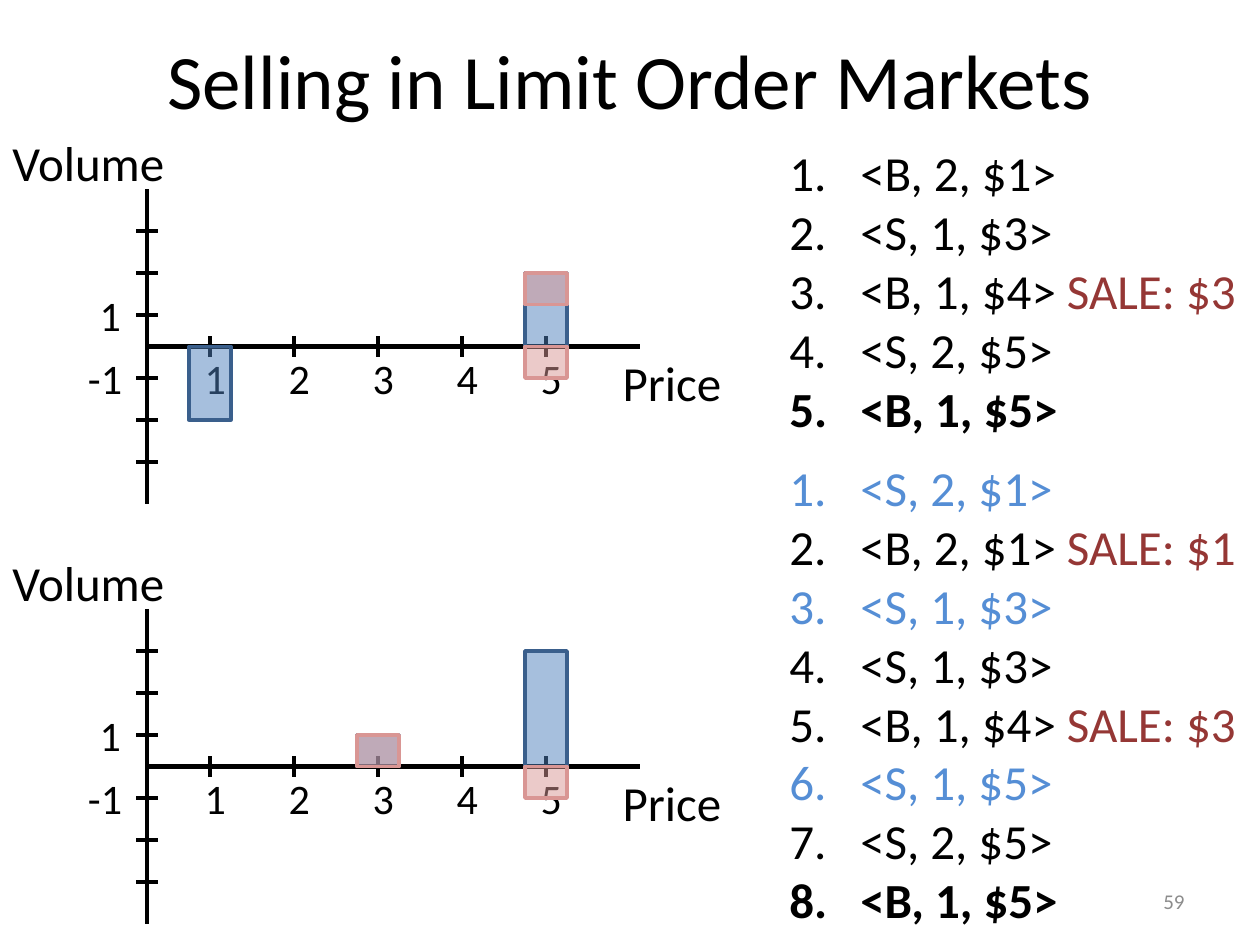
from lxml import etree
from pptx import Presentation
from pptx import util as u
from pptx.dml.color import RGBColor
from pptx.enum import shapes, text
from pptx.oxml.ns import qn

PX = 7620
FONT = "Calibri"
C = {"black": "000000", "grey": "8C8C8C", "sale": "953735", "own": "558ED5",
     "blue": "4F81BD", "blue_line": "3A5F8C", "pink": "D99694"}
ALIGN = {"l": text.PP_ALIGN.LEFT, "c": text.PP_ALIGN.CENTER, "r": text.PP_ALIGN.RIGHT}


def px(*values):
    return [u.Emu(v * PX) for v in values]


def rgb(name):
    return RGBColor.from_string(C[name])


def add_text(p, content, size=28, color="black", bold=False, align="l"):
    p.alignment = ALIGN[align]
    r = p.add_run()
    r.text = content
    r.font.name = FONT
    r.font.size = u.Pt(size)
    r.font.bold = bold
    r.font.color.rgb = rgb(color)


def add_box(s, box, anchor=text.MSO_ANCHOR.TOP):
    tf = s.shapes.add_textbox(*px(*box)).text_frame
    tf.word_wrap = True
    tf.vertical_anchor = anchor
    return tf


def add_label(s, box, content, anchor=text.MSO_ANCHOR.TOP, **fmt):
    add_text(add_box(s, box, anchor).paragraphs[0], content, **fmt)


def add_line(s, x1, y1, x2, y2):
    ln = s.shapes.add_connector(shapes.MSO_CONNECTOR.STRAIGHT, *px(x1, y1, x2, y2))
    ln.line.color.rgb = rgb("black")
    ln.line.width = u.Pt(2.5)
    etree.SubElement(ln._element.spPr, qn("a:effectLst"))


def add_bar(s, box, fill, line):
    sp = s.shapes.add_shape(shapes.MSO_SHAPE.RECTANGLE, *px(*box))
    sp.shadow.inherit = False
    sp.fill.solid()
    sp.fill.fore_color.rgb = rgb(fill)
    color = sp._element.spPr.find(qn("a:solidFill"))[0]
    etree.SubElement(color, qn("a:alpha"), val="50000")
    sp.line.color.rgb = rgb(line)
    sp.line.width = u.Pt(2)


def add_title(s, box, content):
    sp = s.shapes.title
    sp.left, sp.top, sp.width, sp.height = px(*box)
    tf = sp.text_frame
    tf.word_wrap = True
    tf.vertical_anchor = text.MSO_ANCHOR.MIDDLE
    add_text(tf.paragraphs[0], content, size=44, align="c")


def add_volume_plot(s, left, top, bars):
    axis_x, axis_y = left + 140, top + 210
    add_line(s, axis_x, top + 60, axis_x, top + 360)
    add_line(s, axis_x, axis_y, left + 610, axis_y)
    add_label(s, (left, top, 190, 68), "Volume")
    add_label(s, (left + 580, axis_y, 120, 68), "Price", align="c")
    for step in range(3):
        for y in (axis_y - 30 - 40 * step, axis_y + 30 + 40 * step):
            add_line(s, axis_x - 10, y, axis_x + 10, y)
    add_label(s, (left + 80, axis_y - 60, 50, 60), "1", size=24, align="c")
    add_label(s, (left + 70, axis_y, 60, 60), "-1", size=24, align="c")
    for price in range(1, 6):
        x = axis_x - 20 + 80 * price
        add_line(s, x, axis_y + 10, x, axis_y - 10)
        add_label(s, (x - 20, axis_y, 50, 60), str(price), size=24, align="c")
    for price, offset, height, fill, line in bars:
        x = axis_x - 40 + 80 * price
        add_bar(s, (x, axis_y + offset, 40, height), fill, line)


def add_orders(s, box, orders):
    tf = add_box(s, box)
    for i, (order, sale, color, bold) in enumerate(orders):
        p = tf.paragraphs[0] if i == 0 else tf.add_paragraph()
        add_text(p, order + (" " if sale else ""), color=color, bold=bold)
        if sale:
            add_text(p, sale, color="sale")
        pPr = p._p.get_or_add_pPr()
        pPr.set("marL", "514350")
        pPr.set("indent", "-514350")
        etree.SubElement(pPr, qn("a:buFont"), typeface="+mj-lt")
        etree.SubElement(pPr, qn("a:buAutoNum"), type="arabicPeriod")


BLUE = ("blue", "blue_line")
PINK = ("pink", "pink")
PLOTS = [
    (120, [(1, 0, 70, *BLUE), (5, -70, 70, *BLUE),
           (5, 0, 30, *PINK), (5, -70, 30, *PINK)]),
    (520, [(3, -30, 30, *BLUE), (5, -110, 110, *BLUE),
           (5, 0, 30, *PINK), (3, -30, 30, *PINK)]),
]
MARKET_ORDERS = [
    ("<B, 2, $1>", "", "black", False),
    ("<S, 1, $3>", "", "black", False),
    ("<B, 1, $4>", "SALE: $3", "black", False),
    ("<S, 2, $5>", "", "black", False),
    ("<B, 1, $5>", "", "black", True),
]
SELLER_ORDERS = [
    ("<S, 2, $1>", "", "own", False),
    ("<B, 2, $1>", "SALE: $1", "black", False),
    ("<S, 1, $3>", "", "own", False),
    ("<S, 1, $3>", "", "black", False),
    ("<B, 1, $4>", "SALE: $3", "black", False),
    ("<S, 1, $5>", "", "own", False),
    ("<S, 2, $5>", "", "black", False),
    ("<B, 1, $5>", "", "black", True),
]


def main():
    prs = Presentation()
    prs.slide_width, prs.slide_height = px(1200, 900)
    s = prs.slides.add_slide(prs.slide_layouts[5])
    add_title(s, (60, 20, 1080, 110), "Selling in Limit Order Markets")
    add_label(s, (860, 834, 280, 48), "59", text.MSO_ANCHOR.MIDDLE,
              size=12, color="grey", align="r")
    add_orders(s, (740, 130, 460, 295), MARKET_ORDERS)
    add_orders(s, (740, 430, 460, 464), SELLER_ORDERS)
    for top, bars in PLOTS:
        add_volume_plot(s, 0, top, bars)
    prs.save("out.pptx")


if __name__ == "__main__":
    main()
